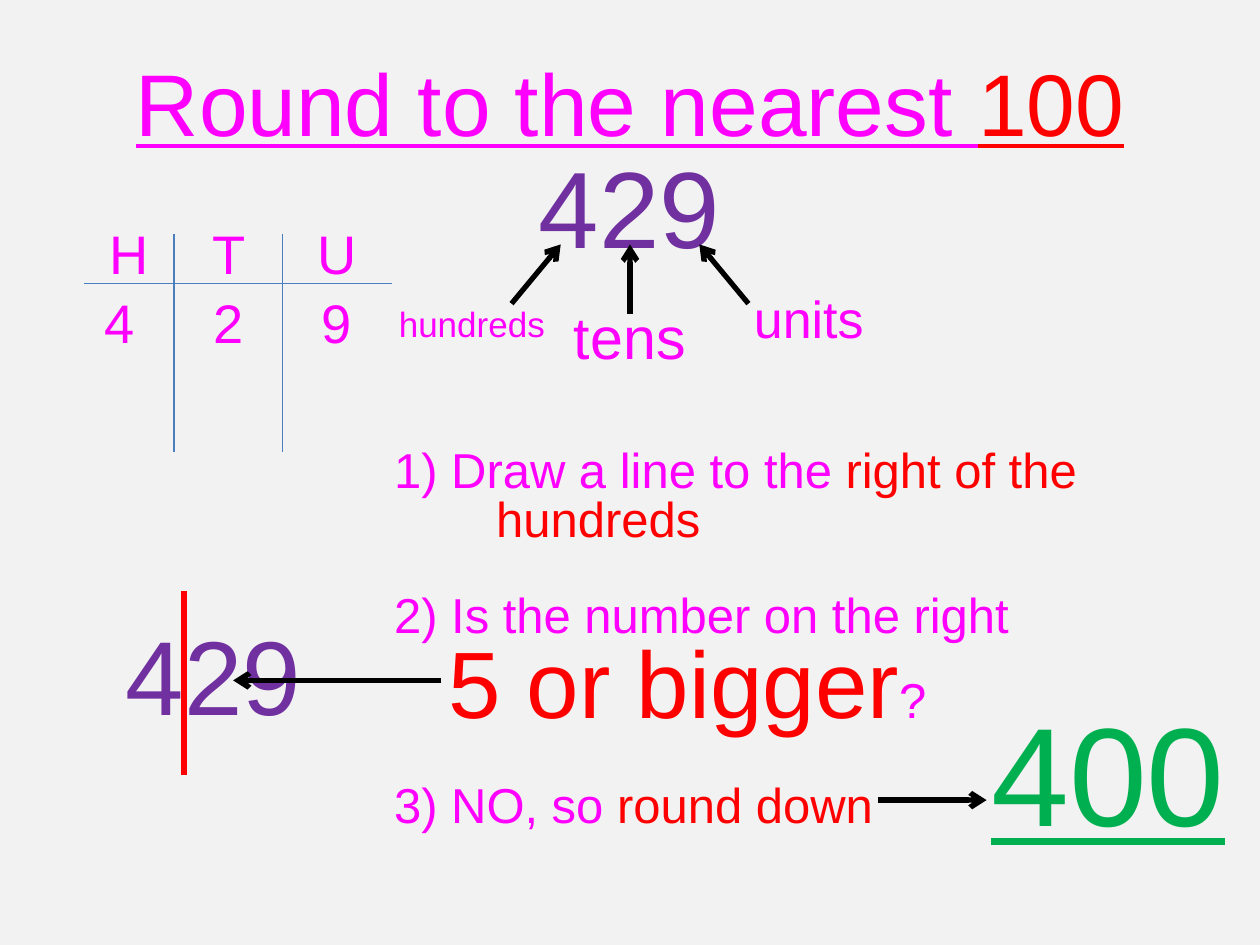
from dataclasses import dataclass
from lxml import etree
from pptx import Presentation
from pptx import util as u
from pptx.dml.color import RGBColor
from pptx.enum import shapes, text
from pptx.oxml import ns


@dataclass(frozen=True)
class Theme:
    font: str = "Arial"
    background: str = "F2F2F2"
    main: str = "FF00FF"
    accent: str = "FF0000"
    number: str = "7030A0"
    answer: str = "00B050"
    grid: str = "4B7EBC"
    arrow: str = "000000"
    title_size: float = 50
    digit_size: float = 31
    step_size: float = 28
    emphasis_size: float = 53.9
    thin: float = 0.75
    thick: float = 3
    tight: float = 0.8


THEME = Theme()
WIDTH, HEIGHT = 10, 7.5
CENTRE = WIDTH / 2

TITLE = [("Round to the nearest ", THEME.main), ("100", THEME.accent)]
PLACE_VALUES = [("H", "4"), ("T", "2"), ("U", "9")]
DIGIT_COLUMNS = [(0.75, 0.67), (1.54, 1.54), (2.4, 2.4)]
DIGIT_TOP, DIGIT_SIDE = 1.78, 0.55

LABELS = [
    ("429", (4.13, 0.92, 1.73, 1.61), 62, THEME.number, THEME.tight),
    ("hundreds", (2.72, 2.1, 2.05, 0.94), 20, THEME.main, 1),
    ("tens", (4.45, 2.25, 1.1, 0.94), 33.8, THEME.main, THEME.tight),
    ("units", (5.87, 2.1, 1.1, 0.94), 29.7, THEME.main, THEME.tight),
    ("429", (0.83, 4.54, 1.73, 1.61), 60, THEME.number, 1),
]
STEPS_BOX = (3.03, 3.52, 6.54, 3.07)
STEP_SPACING, STEP_GAP = 0.83, 27
HANGING, EMPHASIS_INDENT = (0.81, -0.81), (0.43, 0)
STEPS = [
    (HANGING, 0, [("1) Draw a line to the ", THEME.main, THEME.step_size),
                  ("right of the hundreds", THEME.accent, THEME.step_size)]),
    (HANGING, STEP_GAP, [("2) Is the number on the right", THEME.main, THEME.step_size)]),
    (EMPHASIS_INDENT, 0, [("5 or bigger", THEME.accent, THEME.emphasis_size),
                          ("?", THEME.main, THEME.step_size)]),
    (HANGING, STEP_GAP, [("3) NO, so ", THEME.main, THEME.step_size),
                         ("round down", THEME.accent, THEME.step_size)]),
]
GRID_LINES = [((0.67, 2.25), (3.11, 2.25))] + [((x, 1.86), (x, 3.59)) for x in (1.38, 2.24)]
DIVIDER = ((1.46, 4.69), (1.46, 6.15))
ARROWS = [((CENTRE + side * 0.94, 2.41), (CENTRE + side * 0.55, 1.94)) for side in (-1, 1)] + [
    ((CENTRE, 2.49), (CENTRE, 1.94)),
    ((3.5, 5.4), (1.85, 5.4)),
    ((6.97, 6.35), (7.83, 6.35)),
]


def colour(value):
    return RGBColor.from_string(value)


def style(font, size, value):
    font.name = THEME.font
    font.size = u.Pt(size)
    font.color.rgb = colour(value)


def add_run(paragraph, words, value, size):
    run = paragraph.add_run()
    run.text = words
    style(run.font, size, value)
    return run


def add_box(slide, place):
    box = slide.shapes.add_textbox(*map(u.Inches, place))
    box.text_frame.word_wrap = True
    return box.text_frame


def add_label(slide, words, place, size, value, spacing):
    frame = add_box(slide, place)
    frame.vertical_anchor = text.MSO_ANCHOR.MIDDLE
    paragraph = frame.paragraphs[0]
    paragraph.alignment = text.PP_ALIGN.CENTER
    paragraph.line_spacing = spacing
    add_run(paragraph, words, value, size)
    return frame


def add_line(slide, start, end, value, width, arrow=False):
    line = slide.shapes.add_connector(
        shapes.MSO_CONNECTOR.STRAIGHT, *map(u.Inches, (*start, *end)))
    line.line.color.rgb = colour(value)
    line.line.width = u.Pt(width)
    if arrow:
        etree.SubElement(line.line._get_or_add_ln(), ns.qn("a:tailEnd"), type="arrow")
    etree.SubElement(line._element.spPr, ns.qn("a:effectLst"))


def add_title(slide):
    title = slide.shapes.title
    title.left, title.top, title.width, title.height = map(u.Inches, (0.75, 0, 8.5, 1.61))
    title.text_frame.vertical_anchor = text.MSO_ANCHOR.MIDDLE
    paragraph = title.text_frame.paragraphs[0]
    paragraph.alignment = text.PP_ALIGN.CENTER
    for words, value in TITLE:
        add_run(paragraph, words, value, THEME.title_size).font.underline = True


def add_place_values(slide):
    for digits, lefts in zip(PLACE_VALUES, DIGIT_COLUMNS):
        for row, (digit, left) in enumerate(zip(digits, lefts)):
            place = (left, DIGIT_TOP + row * DIGIT_SIDE, DIGIT_SIDE, DIGIT_SIDE)
            add_label(slide, digit, place, THEME.digit_size, THEME.main, THEME.tight)
    for start, end in GRID_LINES:
        add_line(slide, start, end, THEME.grid, THEME.thin)


def add_steps(slide):
    frame = add_box(slide, STEPS_BOX)
    for index, ((margin, indent), gap, runs) in enumerate(STEPS):
        paragraph = frame.add_paragraph() if index else frame.paragraphs[0]
        paragraph.line_spacing = STEP_SPACING
        paragraph.space_before = u.Pt(gap)
        properties = paragraph._p.get_or_add_pPr()
        properties.set("marL", str(u.Inches(margin)))
        properties.set("indent", str(u.Inches(indent)))
        for words, value, size in runs:
            add_run(paragraph, words, value, size)


def add_answer(slide):
    frame = add_label(slide, "400", (7.76, 5.4, 2.07, 1.45), 80, THEME.answer, 1)
    frame.vertical_anchor = text.MSO_ANCHOR.TOP
    frame.word_wrap = False
    frame.auto_size = text.MSO_AUTO_SIZE.SHAPE_TO_FIT_TEXT
    frame.paragraphs[0].runs[0].font.underline = True


def main():
    presentation = Presentation()
    presentation.slide_width, presentation.slide_height = u.Inches(WIDTH), u.Inches(HEIGHT)
    slide = presentation.slides.add_slide(presentation.slide_layouts.get_by_name("Title Only"))
    slide.background.fill.solid()
    slide.background.fill.fore_color.rgb = colour(THEME.background)
    add_title(slide)
    add_place_values(slide)
    for label in LABELS:
        add_label(slide, *label)
    add_line(slide, *DIVIDER, THEME.accent, THEME.thick)
    add_steps(slide)
    for start, end in ARROWS:
        add_line(slide, start, end, THEME.arrow, THEME.thick, arrow=True)
    add_answer(slide)
    presentation.save("out.pptx")


if __name__ == "__main__":
    main()
